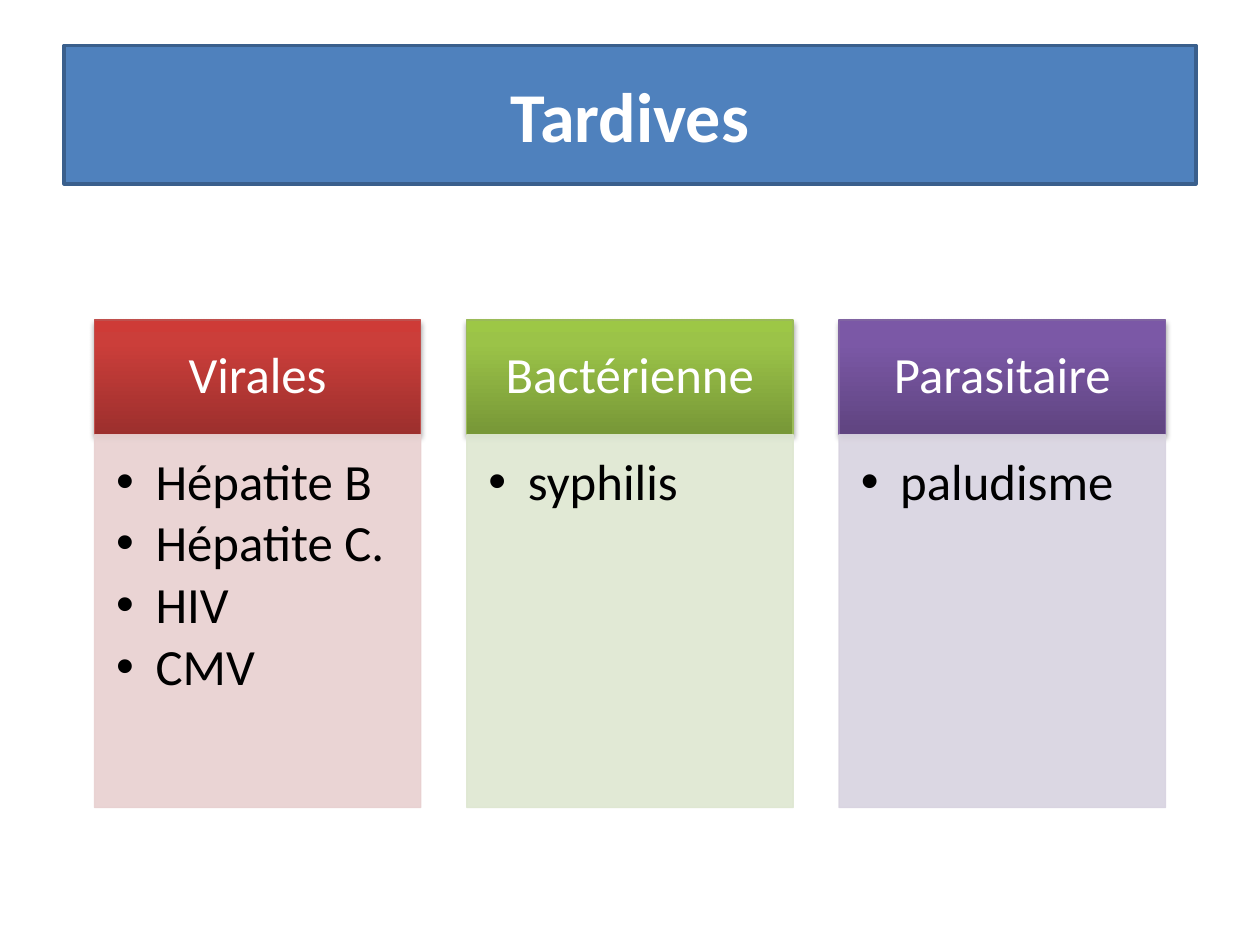
"""Build a slide that lists late infections in three coloured columns."""
from copy import deepcopy

from lxml import etree
from pptx import Presentation
from pptx.dml.color import RGBColor
from pptx.enum.shapes import MSO_SHAPE
from pptx.enum.text import MSO_ANCHOR, PP_ALIGN
from pptx.oxml.ns import qn
from pptx.util import Pt

RECTANGLE = MSO_SHAPE.RECTANGLE
TOP, MIDDLE = MSO_ANCHOR.TOP, MSO_ANCHOR.MIDDLE
LEFT, CENTER = PP_ALIGN.LEFT, PP_ALIGN.CENTER

WHITE = RGBColor(0xFF, 0xFF, 0xFF)
BLACK = RGBColor(0x00, 0x00, 0x00)
BLUE = RGBColor(0x4F, 0x81, 0xBD)
DARK_BLUE = RGBColor(0x3A, 0x5F, 0x8C)
RED = RGBColor(0xC0, 0x50, 0x4D)
RED_SHADES = (RGBColor(0x9C, 0x2F, 0x2D), RGBColor(0xCB, 0x3E, 0x3A), RGBColor(0xCE, 0x3B, 0x37))
PALE_RED = RGBColor(0xE8, 0xD0, 0xD0)
GREEN = RGBColor(0x9B, 0xBB, 0x59)
GREEN_SHADES = (RGBColor(0x77, 0x97, 0x37), RGBColor(0x9B, 0xC3, 0x48), RGBColor(0x9D, 0xC7, 0x46))
PALE_GREEN = RGBColor(0xDE, 0xE7, 0xD1)
PURPLE = RGBColor(0x80, 0x64, 0xA2)
PURPLE_SHADES = (RGBColor(0x5F, 0x44, 0x80), RGBColor(0x7B, 0x58, 0xA6), RGBColor(0x7C, 0x57, 0xA8))
PALE_PURPLE = RGBColor(0xD8, 0xD3, 0xE0)

STOPS = (0, 0.8, 1)
COLUMNS = (
    ("Virales", ("Hépatite B", "Hépatite C.", "HIV", "CMV"), RED, RED_SHADES, PALE_RED),
    ("Bactérienne", ("syphilis",), GREEN, GREEN_SHADES, PALE_GREEN),
    ("Parasitaire", ("paludisme",), PURPLE, PURPLE_SHADES, PALE_PURPLE),
)
COLUMNS_LEFT, COLUMNS_SPAN, COLUMN_WIDTH = 54, 612, 186.5
COLUMN_STEP = (COLUMNS_SPAN - COLUMN_WIDTH) / (len(COLUMNS) - 1)
HEADER_TOP, HEADER_HEIGHT, BODY_HEIGHT = 182.9, 65.5, 213.1


class SlideBuilder:
    """Hold the text style and the current page, and draw its elements."""

    font_name = "Calibri"
    text_size = 29
    title_size = 40
    indent = 22.5

    def __init__(self, page):
        self.page = page

    def frame(self, shape, anchor, insets):
        """Set the anchor and insets of a shape's text and return its frame."""
        frame = shape.text_frame
        frame.word_wrap = True
        frame.vertical_anchor = anchor
        frame.margin_left, frame.margin_top, frame.margin_right, frame.margin_bottom = map(Pt, insets)
        return frame

    def span(self, para, text, size, color, bold=False):
        """Add one formatted run to a paragraph."""
        span = para.add_run()
        span.text = text
        span.font.name = self.font_name
        span.font.size = Pt(size)
        span.font.bold = bold
        span.font.color.rgb = color

    def box(self, left, top, height, line_color):
        """Add an outlined rectangle of column width."""
        box = self.page.shapes.add_shape(RECTANGLE, Pt(left), Pt(top), Pt(COLUMN_WIDTH), Pt(height))
        box.shadow.inherit = False
        box.line.color.rgb = line_color
        box.line.width = Pt(0.75)
        return box

    def title(self, text):
        """Turn the title placeholder into a rounded banner."""
        title = self.page.shapes.title
        title.left, title.top, title.width, title.height = map(Pt, (36.7, 25.9, 646.6, 79.2))
        outline = etree.SubElement(title._element.spPr, qn("a:prstGeom"), prst="roundRect")
        etree.SubElement(outline, qn("a:avLst"))
        title.fill.solid()
        title.fill.fore_color.rgb = BLUE
        title.line.color.rgb = DARK_BLUE
        title.line.width = Pt(2)
        para = self.frame(title, MIDDLE, (7.2, 3.6, 7.2, 3.6)).paragraphs[0]
        para.alignment = CENTER
        self.span(para, text, self.title_size, WHITE, bold=True)

    def header(self, left, text, line_color, shades):
        """Add a column header with a gradient and a soft shadow."""
        box = self.box(left, HEADER_TOP, HEADER_HEIGHT, line_color)
        box.fill.gradient()
        box.fill.gradient_angle = 90
        properties = box._element.spPr
        stop_list = properties.find(".//" + qn("a:gsLst"))
        stop_list.append(deepcopy(stop_list[-1]))
        for stop, position, shade in zip(box.fill.gradient_stops, STOPS, shades):
            stop.position = position
            stop.color.rgb = shade
        shadow = etree.SubElement(
            properties.find(qn("a:effectLst")), qn("a:outerShdw"), blurRad=str(Pt(3.1)),
            dist=str(Pt(1.8)), dir="5400000", rotWithShape="0")
        shadow_color = etree.SubElement(shadow, qn("a:srgbClr"), val=str(BLACK))
        etree.SubElement(shadow_color, qn("a:alpha"), val="35000")
        para = self.frame(box, MIDDLE, (16.5, 9.25, 16.5, 9.25)).paragraphs[0]
        para.alignment = CENTER
        para.line_spacing = 0.9
        self.span(para, text, self.text_size, WHITE)

    def body(self, left, items, color):
        """Add a translucent column body with a bulleted list."""
        box = self.box(left, HEADER_TOP + HEADER_HEIGHT, BODY_HEIGHT, color)
        box.fill.solid()
        box.fill.fore_color.rgb = color
        for tint in box._element.spPr.iter(qn("a:srgbClr")):
            etree.SubElement(tint, qn("a:alpha"), val="90000")
        frame = self.frame(box, TOP, (12.4, 12.4, 16.5, 18.5))
        for index, item in enumerate(items):
            para = frame.add_paragraph() if index else frame.paragraphs[0]
            self.bullet(para)
            self.span(para, item, self.text_size, BLACK)

    def bullet(self, para):
        """Give a paragraph a bullet, a hanging indent and its spacing."""
        properties = para._p.get_or_add_pPr()
        properties.set("marL", str(Pt(self.indent)))
        properties.set("indent", str(-Pt(self.indent)))
        etree.SubElement(properties, qn("a:buFont"), typeface="Arial")
        etree.SubElement(properties, qn("a:buChar"), char="•")
        para.alignment = LEFT
        para.line_spacing = 0.9
        para.space_after = Pt(3.9)


def main():
    """Build and save the deck."""
    deck = Presentation()
    deck.slide_width, deck.slide_height = Pt(720), Pt(540)
    builder = SlideBuilder(deck.slides.add_slide(deck.slide_layouts[5]))
    builder.title("Tardives")
    for index, (heading, items, line_color, shades, pale) in enumerate(COLUMNS):
        left = COLUMNS_LEFT + index * COLUMN_STEP
        builder.header(left, heading, line_color, shades)
        builder.body(left, items, pale)
    deck.save("out.pptx")


if __name__ == "__main__":
    main()
